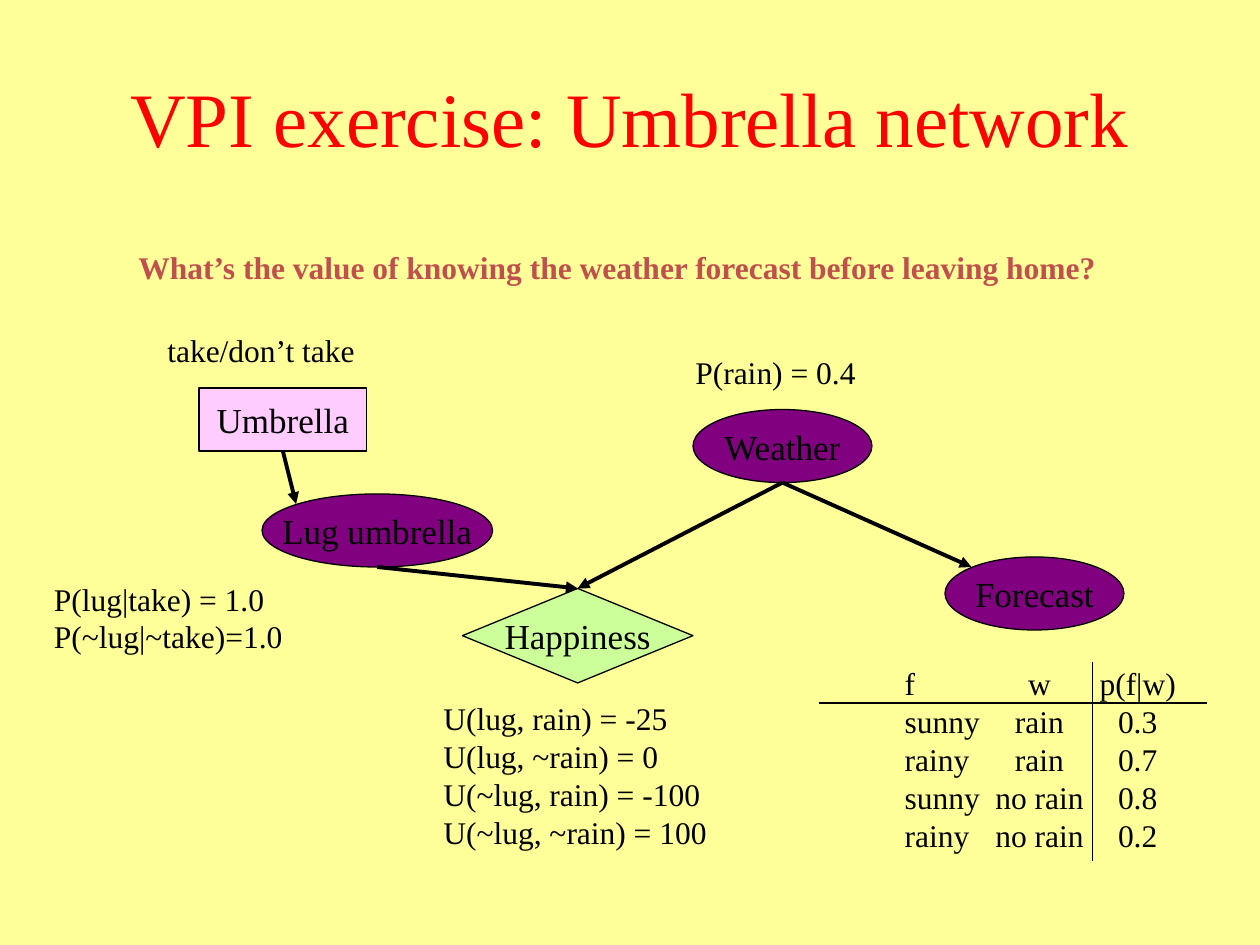
from lxml import etree
from pptx import Presentation
from pptx.dml.color import RGBColor
from pptx.enum.shapes import MSO_CONNECTOR, MSO_SHAPE
from pptx.enum.text import MSO_ANCHOR, PP_ALIGN
from pptx.oxml.ns import qn
from pptx.util import Inches, Pt

OVAL, RECT, DIAMOND = MSO_SHAPE.OVAL, MSO_SHAPE.RECTANGLE, MSO_SHAPE.FLOWCHART_DECISION
LEFT, CENTER = PP_ALIGN.LEFT, PP_ALIGN.CENTER
TOP, MIDDLE = MSO_ANCHOR.TOP, MSO_ANCHOR.MIDDLE
STRAIGHT = MSO_CONNECTOR.STRAIGHT
FONT = "Times New Roman"
BLACK = RGBColor(0, 0, 0)
RED = RGBColor(0xFF, 0, 0)
BRICK = RGBColor(0xC0, 0x50, 0x4D)
YELLOW = RGBColor(0xFF, 0xFF, 0x99)
PURPLE = RGBColor(0x80, 0, 0x80)
PINK = RGBColor(0xFF, 0xCC, 0xFF)
GREEN = RGBColor(0xCC, 0xFF, 0x99)

# Content: boxes are left, top, width, height in inches
TITLE = ("VPI exercise: Umbrella network", (0.5, 0.3, 9, 1.25))
ASK = ("What’s the value of knowing the weather forecast before leaving home?",
       (1, 1.92, 7.88, 0.4))
NOTES = [
    ("take/don’t take", (1.23, 2.58, 1.71, 0.4)),
    ("P(rain) = 0.4", (5.42, 2.75, 1.49, 0.4)),
    ("P(lug|take) = 1.0\nP(~lug|~take)=1.0", (0.33, 4.55, 2.04, 0.71)),
    ("U(lug, rain) = -25\nU(lug, ~rain) = 0\nU(~lug, rain) = -100\nU(~lug, ~rain) = 100",
     (3.42, 5.5, 2.31, 1.31)),
]
NODES = [
    ("Weather", OVAL, PURPLE, (5.5, 3.25, 1.42, 0.58)),
    ("Forecast", OVAL, PURPLE, (7.5, 4.42, 1.42, 0.58)),
    ("Umbrella", RECT, PINK, (1.58, 3.08, 1.33, 0.5)),
    ("Happiness", DIAMOND, GREEN, (3.67, 4.67, 1.83, 0.75)),
    ("Lug umbrella", OVAL, PURPLE, (2.08, 3.92, 1.83, 0.58)),
]
# Arrows run from the foot of one node to a point on the next
ARROWS = [
    ("Weather", "Happiness", (4.58, 4.67)),
    ("Lug umbrella", "Happiness", (4.58, 4.67)),
    ("Weather", "Forecast", (7.71, 4.5)),
    ("Umbrella", "Lug umbrella", (2.35, 4)),
]
ODDS = [
    ("f", "w", "p(f|w)"),
    ("sunny", "rain", "0.3"),
    ("rainy", "rain", "0.7"),
    ("sunny", "no rain", "0.8"),
    ("rainy", "no rain", "0.2"),
]
ODDS_AT, COLS, ROW = (7.18, 5.3), (0.65, 0.84, 0.72), 0.3
RULES = [((6.5, 5.58), (9.58, 5.58)), ((8.67, 5.25), (8.67, 6.83))]


def write(frame, text, size=18, color=BLACK, bold=False, align=LEFT, anchor=TOP, wrap=False):
    frame.text = text
    frame.vertical_anchor = anchor
    frame.word_wrap = wrap
    for para in frame.paragraphs:
        para.alignment = align
        font = para.runs[0].font
        font.name, font.size, font.bold = FONT, Pt(size), bold
        font.color.rgb = color


def label(slide, text, box, **form):
    frame = slide.shapes.add_textbox(*map(Inches, box)).text_frame
    write(frame, text, **form)


def node(slide, text, kind, fill, box):
    shape = slide.shapes.add_shape(kind, *map(Inches, box))
    shape.shadow.inherit = False
    shape.fill.solid()
    shape.fill.fore_color.rgb = fill
    shape.line.color.rgb = BLACK
    shape.line.width = Pt(0.75)
    write(shape.text_frame, text, size=20, align=CENTER, anchor=MIDDLE)
    return shape


def line(slide, start, end, width=0.75, head=False):
    link = slide.shapes.add_connector(STRAIGHT, *map(Inches, start + end))
    link.line.color.rgb = BLACK
    link.line.width = Pt(width)
    if head:
        etree.SubElement(link.line._get_or_add_ln(), qn("a:tailEnd"), type="triangle")
    etree.SubElement(link._element.spPr, qn("a:effectLst"))
    return link


def odds(slide):
    box = (*ODDS_AT, sum(COLS), ROW * len(ODDS))
    table = slide.shapes.add_table(len(ODDS), len(COLS), *map(Inches, box)).table
    table.first_row = table.horz_banding = False
    for col, width in zip(table.columns, COLS):
        col.width = Inches(width)
    for r, row in enumerate(ODDS):
        table.rows[r].height = Inches(ROW)
        for c, text in enumerate(row):
            cell = table.cell(r, c)
            cell.fill.background()
            cell.margin_left = cell.margin_right = cell.margin_top = cell.margin_bottom = 0
            write(cell.text_frame, text, align=CENTER if c else LEFT, wrap=True)
            # No borders: the two rules stand alone
            props = cell._tc.get_or_add_tcPr()
            for i, side in enumerate(("lnL", "lnR", "lnT", "lnB")):
                edge = etree.Element(qn("a:" + side), w="0")
                etree.SubElement(edge, qn("a:noFill"))
                props.insert(i, edge)


def main():
    prs = Presentation()
    prs.slide_width, prs.slide_height = Inches(10), Inches(7.5)
    slide = prs.slides.add_slide(prs.slide_layouts[6])
    slide.background.fill.solid()
    slide.background.fill.fore_color.rgb = YELLOW

    # Title, question and notes
    label(slide, *TITLE, size=44, color=RED, align=CENTER, anchor=MIDDLE, wrap=True)
    label(slide, *ASK, color=BRICK, bold=True)
    for text, box in NOTES:
        label(slide, text, box)

    # Network
    boxes = {name: box for name, _, _, box in NODES}
    shapes = {item[0]: node(slide, *item) for item in NODES}
    for tail, tip, end in ARROWS:
        x, y, w, h = boxes[tail]
        link = line(slide, (x + w / 2, y + h), end, width=2.25, head=True)
        if tail == "Umbrella":
            link.begin_connect(shapes[tail], 2)
        if tip == "Happiness":
            link.end_connect(shapes[tip], 0)

    # Forecast table with its rules
    odds(slide)
    for start, end in RULES:
        line(slide, start, end)

    prs.save("out.pptx")


if __name__ == "__main__":
    main()
